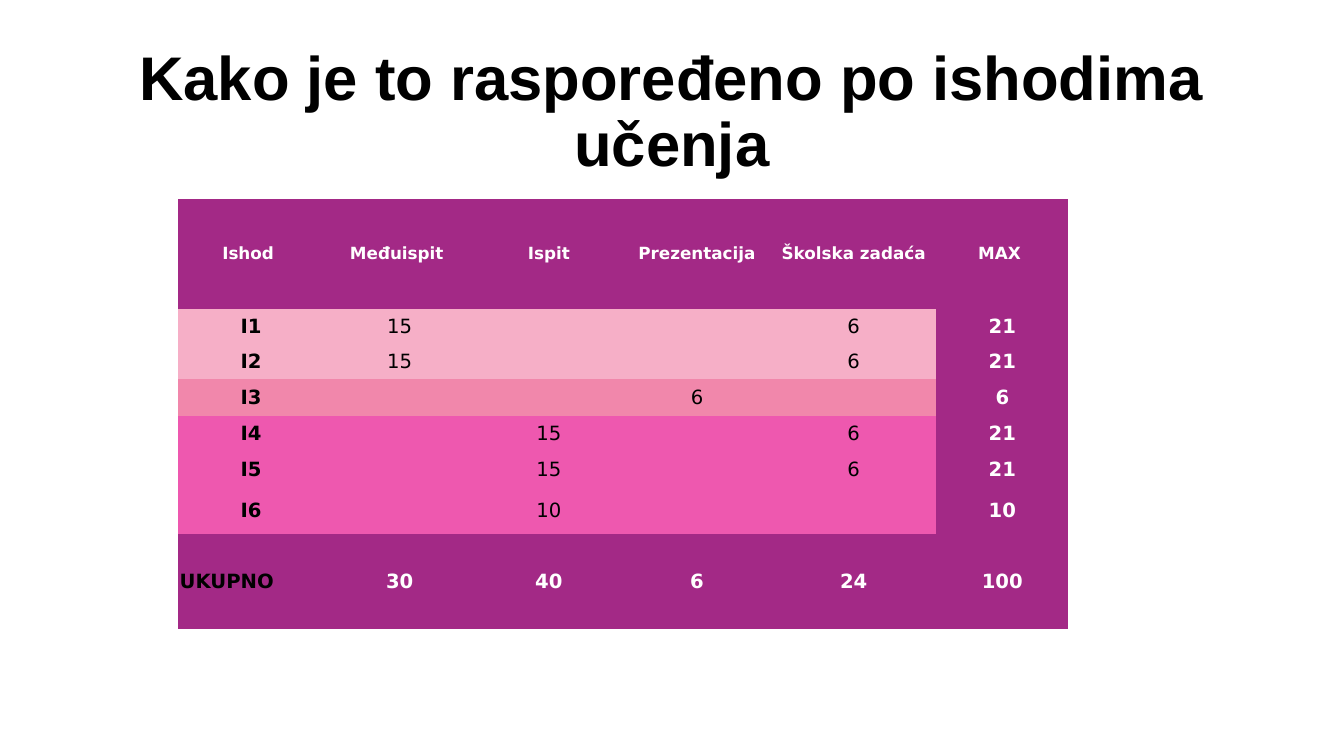
import pptx
import pptx.util
import pptx.dml.color
import pptx.enum.text

Pt = pptx.util.Pt
RGBColor = pptx.dml.color.RGBColor
ALIGN = pptx.enum.text.PP_ALIGN
MIDDLE = pptx.enum.text.MSO_ANCHOR.MIDDLE

COLORS = {
    "purple": "A32986",
    "light pink": "F6AFC7",
    "pink": "F187AB",
    "hot pink": "EE58AF",
    "white": "FFFFFF",
    "black": "000000",
}
NO_GRID_STYLE = "{2D5ABB26-0587-4C30-8999-92F81FD0307C}"

deck = pptx.Presentation()
deck.slide_width, deck.slide_height = Pt(960), Pt(540)
slide = deck.slides.add_slide(deck.slide_layouts[5])

# Title
title = slide.shapes.title
title.left, title.top, title.width, title.height = Pt(66), Pt(28.75), Pt(828), Pt(104.4)
title.text_frame.text = "Kako je to raspoređeno po ishodima učenja"
title.text_frame.word_wrap = True
title.text_frame.auto_size = pptx.enum.text.MSO_AUTO_SIZE.NONE
title.text_frame.vertical_anchor = MIDDLE
heading = title.text_frame.paragraphs[0]
heading.alignment = ALIGN.CENTER
heading.line_spacing = 0.9
heading.font.name = "Arial"
heading.font.size = Pt(44)
heading.font.bold = True
heading.font.color.rgb = RGBColor.from_string(COLORS["black"])

# Points per learning outcome: row height, row colour, cell texts
outcomes = [
    (78.5, "purple", ["Ishod ", "Međuispit ", "Ispit", "Prezentacija", "Školska zadaća", "MAX "]),
    (25.7, "light pink", ["I1", "15", "", "", "6", "21"]),
    (24.5, "light pink", ["I2", "15", "", "", "6", "21"]),
    (26, "pink", ["I3", "", "", "6", "", "6"]),
    (25.8, "hot pink", ["I4", "", "15", "", "6", "21"]),
    (25.8, "hot pink", ["I5", "", "15", "", "6", "21"]),
    (33.1, "hot pink", ["I6", "", "10", "", "", "10"]),
    (67.7, "purple", ["UKUPNO", "30", "40", "6", "24", "100"]),
]
column_widths = [105.1, 107.3, 105.8, 105.8, 118.1, 94.3]
max_column = len(column_widths) - 1
total_row = len(outcomes) - 1

# Table without grid or banding
points = slide.shapes.add_table(
    len(outcomes), len(column_widths), Pt(126.8), Pt(142.3),
    Pt(sum(column_widths)), Pt(sum(height for height, _, _ in outcomes))).table
points.first_row = points.horz_banding = False
points._tbl.tblPr[0].text = NO_GRID_STYLE
for column, width in zip(points.columns, column_widths):
    column.width = Pt(width)

# Cells
for r, (height, row_color, texts) in enumerate(outcomes):
    points.rows[r].height = Pt(height)
    for c, text in enumerate(texts):
        on_purple = row_color == "purple" or c == max_column
        is_total_label = r == total_row and c == 0
        cell = points.cell(r, c)
        cell.fill.solid()
        cell.fill.fore_color.rgb = RGBColor.from_string(
            COLORS["purple" if on_purple else row_color])
        cell.margin_left = cell.margin_right = Pt(1.5)
        cell.margin_top = cell.margin_bottom = Pt(1.5)
        cell.vertical_anchor = MIDDLE
        cell.text = text
        entry = cell.text_frame.paragraphs[0]
        entry.alignment = ALIGN.LEFT if is_total_label else ALIGN.CENTER
        entry.font.name = "DejaVu Sans"
        entry.font.size = Pt(12 if r == 0 else 14)
        entry.font.bold = on_purple or c == 0
        entry.font.color.rgb = RGBColor.from_string(
            COLORS["white" if on_purple and not is_total_label else "black"])

deck.save("out.pptx")
